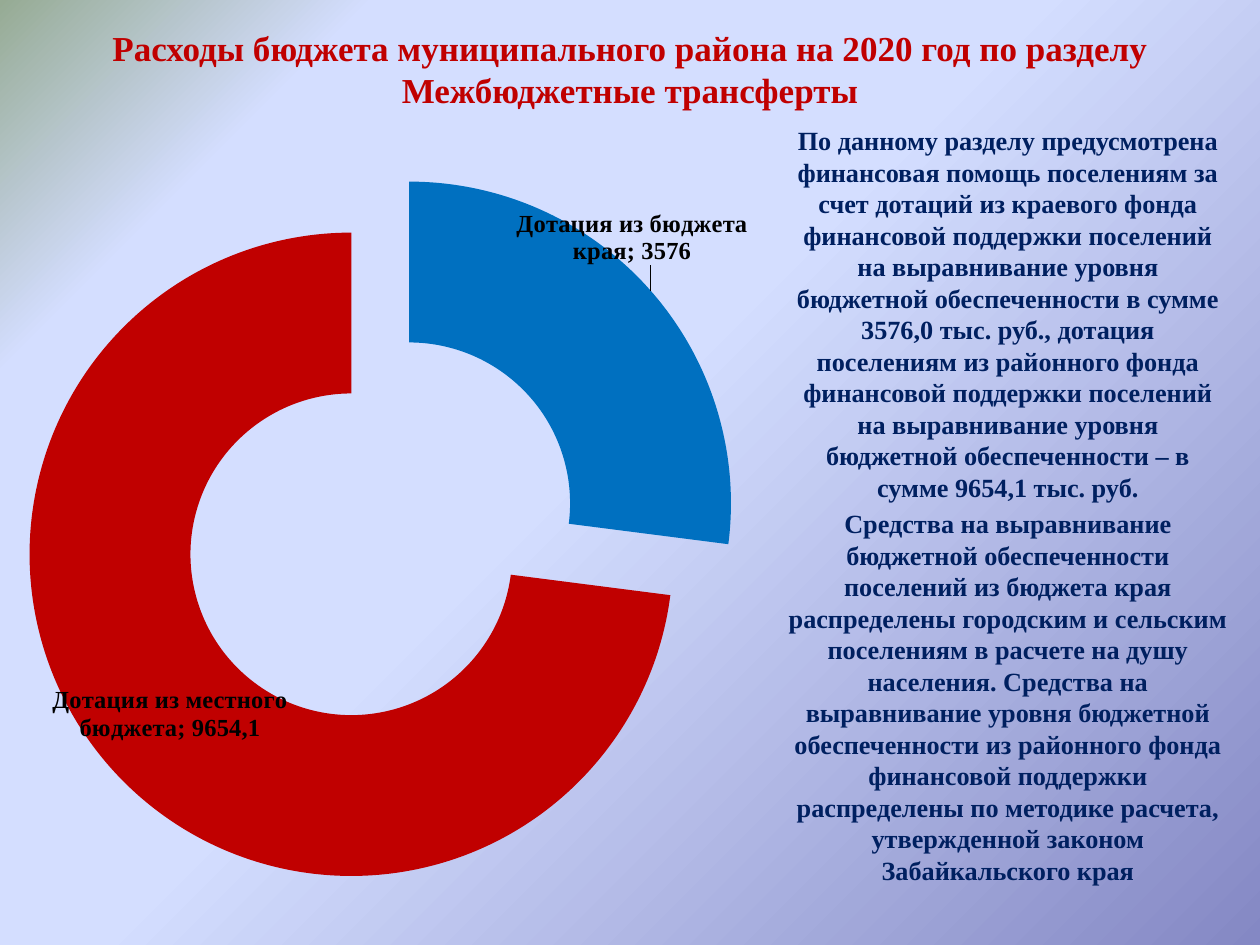
from pptx import Presentation
from pptx.chart.data import CategoryChartData
from pptx.dml.color import RGBColor
from pptx.enum.chart import XL_CHART_TYPE
from pptx.enum.text import MSO_ANCHOR, MSO_AUTO_SIZE, PP_ALIGN
from pptx.oxml import parse_xml
from pptx.oxml.ns import qn
from pptx.util import Pt
from lxml.etree import SubElement

PX = 914400 // 126
FONT = "Times New Roman"
COLORS = {
    "title": "C00000",
    "body": "002060",
    "label": "000000",
    "regional": "0070C0",
    "local": "C00000",
}
BACKGROUND_STOPS = [(0, "8488C4"), (53, "D4DEFF"), (83, "D4DEFF"), (100, "96AB94")]

TITLE = "Расходы бюджета муниципального района на 2020 год по разделу Межбюджетные трансферты"
PARAGRAPHS = [
    "По данному разделу предусмотрена финансовая помощь поселениям за счет дотаций "
    "из краевого фонда финансовой поддержки поселений на выравнивание уровня бюджетной "
    "обеспеченности в сумме 3576,0 тыс. руб., дотация поселениям из районного фонда "
    "финансовой поддержки поселений на выравнивание уровня бюджетной обеспеченности "
    "– в сумме 9654,1 тыс. руб.",
    "Средства на выравнивание бюджетной обеспеченности поселений из бюджета края "
    "распределены городским и сельским поселениям в расчете на душу населения. "
    "Средства на выравнивание уровня бюджетной обеспеченности из районного фонда "
    "финансовой поддержки распределены по методике расчета, утвержденной законом "
    "Забайкальского края",
]
GRANTS = [
    {"name": "Дотация из бюджета края", "value": 3576, "color": "regional",
     "offset": (0.06, -0.14), "text": None},
    {"name": "Дотация из местного бюджета", "value": 9654.1, "color": "local",
     "offset": (0, 0), "text": "Дотация из местного бюджета; 9654,1"},
]
TITLE_BOX = (63, 0, 1134, 137)
CHART_BOX = (20, 157, 728, 759)
BODY_BOX = (728, 118, 512, 808)
PLOT_LAYOUT = {"layoutTarget": "inner", "xMode": "edge", "yMode": "edge",
               "x": 0, "y": 0.01, "w": 0.99, "h": 0.96}


def emu(box):
    return [length * PX for length in box]


def style_font(font, size, color):
    font.name = FONT
    font.size = Pt(size)
    font.bold = True
    font.color.rgb = RGBColor.from_string(COLORS[color])


def fill_placeholder(shape, box, paragraphs, size, color):
    shape.left, shape.top, shape.width, shape.height = emu(box)
    frame = shape.text_frame
    frame.text = "\n".join(paragraphs)
    frame.word_wrap = True
    frame.auto_size = MSO_AUTO_SIZE.NONE
    for paragraph in frame.paragraphs:
        paragraph.alignment = PP_ALIGN.CENTER
        for run in paragraph.runs:
            style_font(run.font, size, color)
    return frame


def set_background(slide):
    fill = slide.background.fill
    fill.gradient()
    fill.gradient_angle = 135
    stop_list = next(slide.element.iter(qn("a:gsLst")))
    for stop in list(stop_list):
        stop_list.remove(stop)
    for position, color in BACKGROUND_STOPS:
        stop = SubElement(stop_list, qn("a:gs"), pos=str(position * 1000))
        SubElement(stop, qn("a:srgbClr"), val=color)


def make_layout(values):
    layout = parse_xml(
        '<c:layout xmlns:c="http://schemas.openxmlformats.org/drawingml/2006/chart"/>')
    manual = SubElement(layout, qn("c:manualLayout"))
    for name, value in values.items():
        SubElement(manual, qn(f"c:{name}"), val=str(value))
    return layout


def add_grants_chart(slide):
    data = CategoryChartData()
    data.categories = [grant["name"] for grant in GRANTS]
    data.add_series("Series 1", [grant["value"] for grant in GRANTS])
    chart = slide.shapes.add_chart(XL_CHART_TYPE.DOUGHNUT, *emu(CHART_BOX), data).chart
    chart.has_legend = False
    chart.has_title = False
    chart.font.name = "Calibri"
    chart.font.size = Pt(18)
    plot = chart.plots[0]
    plot.vary_by_categories = True
    series = plot.series[0]

    series.data_labels.show_value = True
    series.data_labels.show_category_name = True
    style_font(series.data_labels.font, 14, "label")
    for index, grant in enumerate(GRANTS):
        point = series.points[index]
        point.format.fill.solid()
        point.format.fill.fore_color.rgb = RGBColor.from_string(COLORS[grant["color"]])
        point.format.line.fill.background()
        label = point.data_label
        if grant["text"]:
            label.text_frame.text = grant["text"]
            style_font(label.text_frame.paragraphs[0].runs[0].font, 14, "label")
        else:
            style_font(label.font, 14, "label")

    chart_space = plot.series[0].element.getroottree().getroot() if hasattr(
        series, "element") else chart.element
    for label, grant in zip(list(chart_space.iter(qn("c:dLbl"))), GRANTS):
        x, y = grant["offset"]
        label.find(qn("c:idx")).addnext(make_layout({"x": x, "y": y}))
        label.find(qn("c:showCatName")).set("val", "1")
        SubElement(label, qn("c:separator")).text = "; "

    series_name = next(chart_space.iter(qn("c:tx")))
    explosion = SubElement(series_name.getparent(), qn("c:explosion"), val="24")
    series_name.addnext(explosion)

    plot_area = next(chart_space.iter(qn("c:plotArea")))
    for layout in plot_area.findall(qn("c:layout")):
        plot_area.remove(layout)
    plot_area.insert(0, make_layout(PLOT_LAYOUT))


def main():
    presentation = Presentation()
    presentation.slide_width = 1260 * PX
    presentation.slide_height = 945 * PX
    slide = presentation.slides.add_slide(presentation.slide_layouts[1])
    set_background(slide)
    title_frame = fill_placeholder(slide.shapes.title, TITLE_BOX, [TITLE], 20, "title")
    title_frame.vertical_anchor = MSO_ANCHOR.MIDDLE
    add_grants_chart(slide)
    body_frame = fill_placeholder(slide.placeholders[1], BODY_BOX, PARAGRAPHS, 15, "body")
    for paragraph in body_frame.paragraphs:
        paragraph.space_before = Pt(3)
        properties = paragraph._p.get_or_add_pPr()
        properties.set("marL", str(48 * PX))
        properties.set("indent", "0")
        properties.append(parse_xml(
            '<a:buNone xmlns:a="http://schemas.openxmlformats.org/drawingml/2006/main"/>'))
    presentation.save("out.pptx")


if __name__ == "__main__":
    main()
